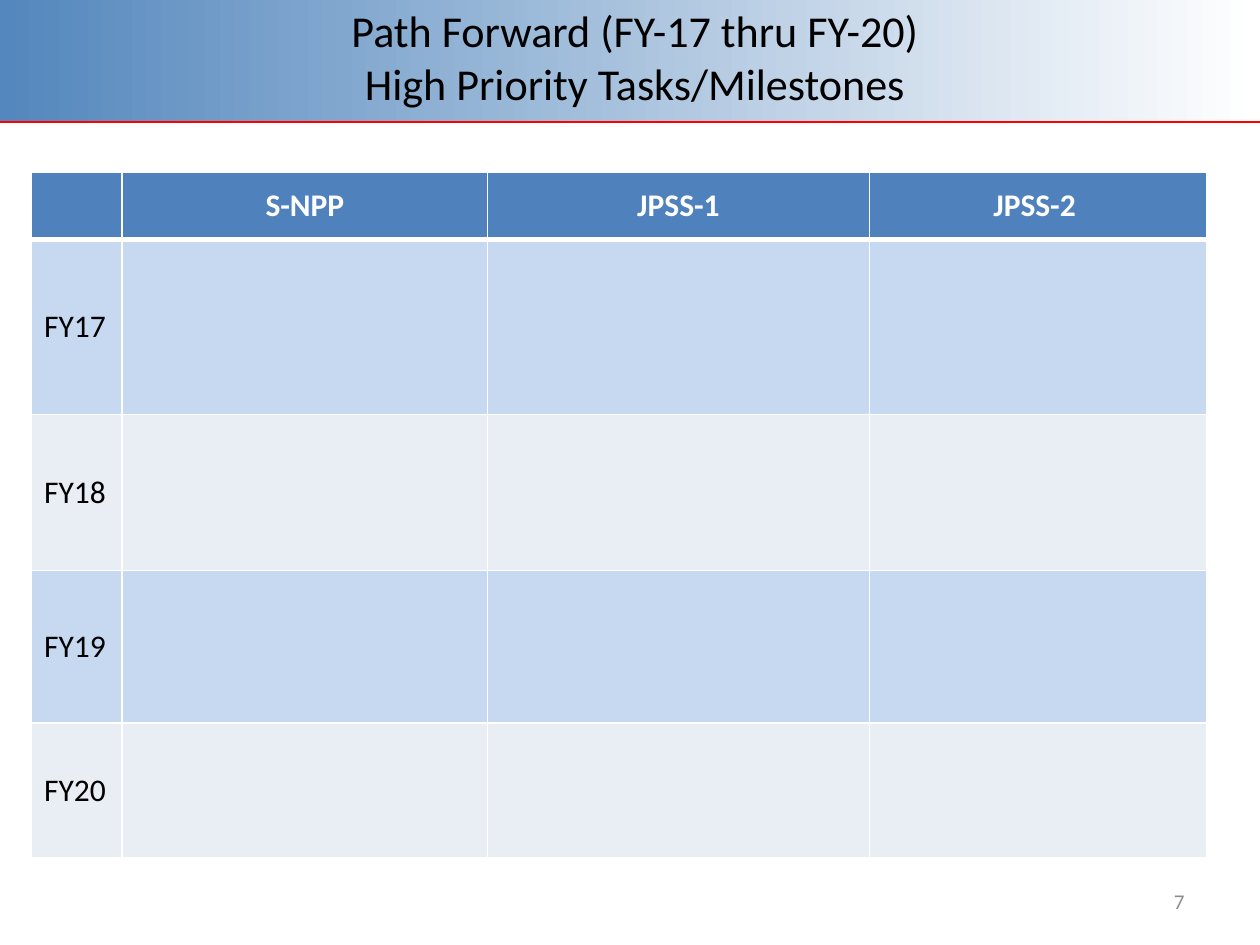
from lxml import etree
from pptx import Presentation
from pptx.dml.color import RGBColor
from pptx.enum import shapes, text
from pptx.oxml.ns import qn
from pptx.util import Inches, Pt

BLACK = RGBColor(0x00, 0x00, 0x00)
WHITE = RGBColor(0xFF, 0xFF, 0xFF)
RED = RGBColor(0xFF, 0x00, 0x00)
GREY = RGBColor(0x8C, 0x8C, 0x8C)
BAND_BLUE = RGBColor(0x54, 0x87, 0xBD)
HEAD_BLUE = RGBColor(0x4F, 0x81, 0xBD)
ROW_BLUE = RGBColor(0xC6, 0xD9, 0xF1)
ROW_PALE = RGBColor(0xE9, 0xED, 0xF4)

TITLE = ["Path Forward (FY-17 thru FY-20)", "High Priority Tasks/Milestones"]
MISSIONS = ["", "S-NPP", "JPSS-1", "JPSS-2 "]
YEARS = ["FY17", "FY18", "FY19", "FY20"]
COL_WIDTHS = [0.72, 2.9, 3.03, 2.68]
ROW_HEIGHTS = [0.53, 1.39, 1.24, 1.21, 1.07]


def write(p, lines, align, color, **font):
    """Fill a paragraph with lines parted by line breaks."""
    p.alignment = align
    for i, line in enumerate(lines):
        if i:
            p.add_line_break()
        r = p.add_run()
        r.text = line
        r.font.color.rgb = color
        for name, value in {"name": "Calibri", **font}.items():
            setattr(r.font, name, value)


def add_band(s):
    """Gradient band across the top, with a red rule below it."""
    sp = s.shapes.add_shape(shapes.MSO_SHAPE.RECTANGLE, Inches(0), Inches(-0.01),
                            Inches(10), Inches(0.97))
    sp.shadow.inherit = False
    sp.line.fill.background()
    sp.fill.gradient()
    sp.fill.gradient_angle = 0
    for stop, color, position in zip(sp.fill.gradient_stops, (BAND_BLUE, WHITE), (0, 1)):
        stop.color.rgb = color
        stop.position = position
    rule = s.shapes.add_connector(shapes.MSO_CONNECTOR.STRAIGHT, Inches(0), Inches(0.97),
                                  Inches(10), Inches(0.97))
    rule.line.color.rgb = RED
    rule.line.width = Pt(1.25)
    etree.SubElement(rule._element.spPr, qn("a:effectLst"))


def add_title(s):
    title = s.shapes.title
    box = {"left": 1.08, "top": 0, "width": 7.92, "height": 0.9}
    for name, value in box.items():
        setattr(title, name, Inches(value))
    tf = title.text_frame
    tf.auto_size = text.MSO_AUTO_SIZE.NONE
    tf.vertical_anchor = text.MSO_ANCHOR.MIDDLE
    write(tf.paragraphs[0], TITLE, text.PP_ALIGN.CENTER, BLACK, size=Pt(25.2))
    s.shapes.element.append(title.element)  # bring in front of the band


def set_borders(cell, **widths):
    """White borders; widths in points by side, placed before the cell fill."""
    tc_pr = cell._tc.get_or_add_tcPr()
    for i, (side, width) in enumerate(widths.items()):
        ln = etree.Element(qn(f"a:ln{side}"), w=str(Pt(width)))
        fill = etree.SubElement(ln, qn("a:solidFill"))
        etree.SubElement(fill, qn("a:srgbClr"), val=str(WHITE))
        tc_pr.insert(i, ln)


def add_schedule(s):
    """Fiscal years down, missions across."""
    rows = [MISSIONS] + [[year, "", "", ""] for year in YEARS]
    table = s.shapes.add_table(len(rows), len(MISSIONS), Inches(0.25), Inches(1.37),
                               Inches(sum(COL_WIDTHS)), Inches(sum(ROW_HEIGHTS))).table
    for col, width in zip(table.columns, COL_WIDTHS):
        col.width = Inches(width)
    for i, (row, height) in enumerate(zip(rows, ROW_HEIGHTS)):
        table.rows[i].height = Inches(height)
        head = i == 0
        for j, label in enumerate(row):
            cell = table.cell(i, j)
            cell.vertical_anchor = text.MSO_ANCHOR.MIDDLE
            cell.fill.solid()
            cell.fill.fore_color.rgb = HEAD_BLUE if head else (ROW_PALE, ROW_BLUE)[i % 2]
            set_borders(cell, L=1, R=1, T=3 if i == 1 else 1, B=3 if head else 1)
            if label:
                write(cell.text_frame.paragraphs[0], [label],
                      text.PP_ALIGN.CENTER if head else text.PP_ALIGN.LEFT,
                      WHITE if head else BLACK, size=Pt(18), bold=head)


def add_page_number(s):
    tf = s.shapes.add_textbox(Inches(7.17), Inches(6.95), Inches(2.33), Inches(0.4)).text_frame
    tf.word_wrap = True
    tf.vertical_anchor = text.MSO_ANCHOR.MIDDLE
    write(tf.paragraphs[0], ["7"], text.PP_ALIGN.RIGHT, GREY, size=Pt(12))


def main():
    prs = Presentation()
    prs.slide_width, prs.slide_height = Inches(10), Inches(7.5)
    s = prs.slides.add_slide(prs.slide_layouts[5])  # title only
    add_band(s)
    add_title(s)
    add_schedule(s)
    add_page_number(s)
    prs.save("out.pptx")


if __name__ == "__main__":
    main()
